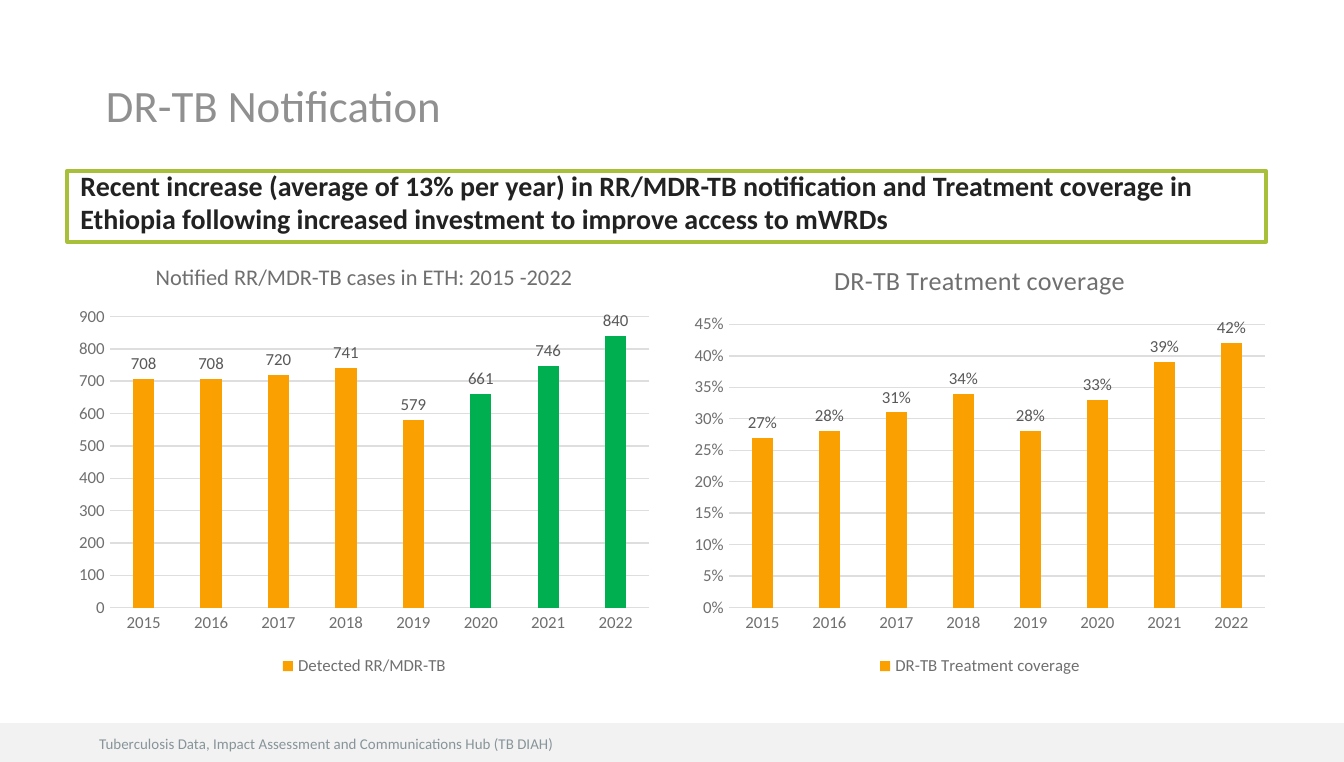
from dataclasses import dataclass

from pptx import Presentation
from pptx.chart.data import CategoryChartData
from pptx.dml.color import RGBColor
from pptx.enum.chart import XL_CHART_TYPE, XL_LABEL_POSITION, XL_LEGEND_POSITION, XL_TICK_MARK
from pptx.enum.shapes import MSO_SHAPE
from pptx.enum.text import MSO_ANCHOR, PP_ALIGN
from pptx.util import Inches, Pt

COLUMNS = XL_CHART_TYPE.COLUMN_CLUSTERED
OUTSIDE_END = XL_LABEL_POSITION.OUTSIDE_END
LEGEND_BOTTOM = XL_LEGEND_POSITION.BOTTOM
NO_TICK = XL_TICK_MARK.NONE
RECTANGLE = MSO_SHAPE.RECTANGLE
TOP, MIDDLE, BOTTOM = MSO_ANCHOR.TOP, MSO_ANCHOR.MIDDLE, MSO_ANCHOR.BOTTOM
LEFT = PP_ALIGN.LEFT


@dataclass(frozen=True)
class Theme:
    font: str = "Calibri"
    white: str = "FFFFFF"
    band: str = "F2F2F2"
    footer: str = "879499"
    title: str = "909090"
    text: str = "222222"
    frame: str = "A7BF39"
    axis_text: str = "6F6F6F"
    label_text: str = "595959"
    grid: str = "DEDEDE"
    bar: str = "FAA000"
    highlight: str = "00B050"
    footer_size: int = 8
    title_size: int = 24
    message_size: int = 15
    chart_size: int = 10
    axis_size: int = 9


THEME = Theme()
YEARS = [str(year) for year in range(2015, 2023)]


def color(value):
    return RGBColor.from_string(value)


def style_font(font, size, value, bold=False):
    font.name = THEME.font
    font.size = Pt(size)
    font.bold = bold
    font.color.rgb = color(value)


def write_text(shape, text, size, value, anchor, bold=False):
    frame = shape.text_frame
    frame.word_wrap = True
    frame.vertical_anchor = anchor
    paragraph = frame.paragraphs[0]
    paragraph.alignment = LEFT
    run = paragraph.add_run()
    run.text = text
    style_font(run.font, size, value, bold)


def add_rectangle(slide, box, fill):
    shape = slide.shapes.add_shape(RECTANGLE, *box)
    shape.shadow.inherit = False
    shape.fill.solid()
    shape.fill.fore_color.rgb = color(fill)
    shape.line.fill.background()
    return shape


def add_footer(slide, left, top, width, height):
    add_rectangle(slide, (left, top, width, height), THEME.band)
    credit = slide.shapes.add_textbox(
        left + Inches(0.64), top + Inches(0.04), Inches(5), Inches(0.24))
    write_text(credit, "Tuberculosis Data, Impact Assessment and Communications Hub (TB DIAH)",
               THEME.footer_size, THEME.footer, TOP)


def add_title(slide, *box):
    title = slide.shapes.add_textbox(*box)
    write_text(title, "DR-TB Notification", THEME.title_size, THEME.title, BOTTOM)


def add_message(slide, *box):
    message = add_rectangle(slide, box, THEME.white)
    message.line.color.rgb = color(THEME.frame)
    message.line.width = Pt(2)
    write_text(message, "Recent increase (average of 13% per year) in RR/MDR-TB notification and "
               "Treatment coverage in Ethiopia following increased investment to improve "
               "access to mWRDs", THEME.message_size, THEME.text, BOTTOM, bold=True)


def style_axes(chart, maximum, step, number_format):
    years, values = chart.category_axis, chart.value_axis
    for axis in (years, values):
        axis.major_tick_mark = axis.minor_tick_mark = NO_TICK
        style_font(axis.tick_labels.font, THEME.axis_size, THEME.axis_text)
    values.minimum_scale, values.maximum_scale, values.major_unit = 0, maximum, step
    values.tick_labels.number_format = number_format
    values.tick_labels.number_format_is_linked = False
    values.format.line.fill.background()
    values.has_major_gridlines = True
    for line in (years.format.line, values.major_gridlines.format.line):
        line.color.rgb = color(THEME.grid)
        line.width = Pt(0.75)


def add_column_chart(slide, box, title, title_size, name, values, maximum, step,
                     number_format="General", overlap=0, highlighted=()):
    data = CategoryChartData(number_format=number_format)
    data.categories = YEARS
    data.add_series(name, values)
    chart = slide.shapes.add_chart(COLUMNS, *box, data).chart
    style_font(chart.font, THEME.chart_size, THEME.text)

    chart.has_title = True
    run = chart.chart_title.text_frame.paragraphs[0].add_run()
    run.text = title
    style_font(run.font, title_size, THEME.axis_text)
    chart.chart_title.include_in_layout = False

    chart.has_legend = True
    chart.legend.position = LEGEND_BOTTOM
    chart.legend.include_in_layout = False
    style_font(chart.legend.font, THEME.axis_size, THEME.axis_text)
    style_axes(chart, maximum, step, number_format)

    plot = chart.plots[0]
    plot.vary_by_categories = False
    plot.gap_width = 219
    plot.overlap = overlap
    series = plot.series[0]
    series.invert_if_negative = False
    series.format.fill.solid()
    series.format.fill.fore_color.rgb = color(THEME.bar)
    for year in highlighted:
        fill = series.points[YEARS.index(year)].format.fill
        fill.solid()
        fill.fore_color.rgb = color(THEME.highlight)
    labels = series.data_labels
    labels.show_value = True
    labels.position = OUTSIDE_END
    labels.number_format = number_format
    labels.number_format_is_linked = False
    style_font(labels.font, THEME.axis_size, THEME.label_text)


def add_charts(slide, left, top, width, height):
    """Place the two charts side by side in equal halves."""
    gap = Inches(0.16)
    chart_width = (width - gap) // 2
    add_column_chart(
        slide, (left + chart_width + gap, top, chart_width, height),
        "DR-TB Treatment coverage", 14, "DR-TB Treatment coverage",
        (0.27, 0.28, 0.31, 0.34, 0.28, 0.33, 0.39, 0.42), 0.45, 0.05, number_format="0%")
    add_column_chart(
        slide, (left, top, chart_width, height),
        "Notified RR/MDR-TB cases in ETH: 2015 -2022", 12, "Detected RR/MDR-TB",
        (708, 708, 720, 741, 579, 661, 746, 840), 900, 100, overlap=-27,
        highlighted=("2020", "2021", "2022"))


def main():
    presentation = Presentation()
    presentation.slide_width = Inches(10)
    presentation.slide_height = Inches(5.67)
    slide = presentation.slides.add_slide(presentation.slide_layouts[6])
    add_footer(slide, Inches(0), Inches(5.38), Inches(10), Inches(0.29))
    add_title(slide, Inches(0.69), Inches(0.51), Inches(8.62), Inches(0.52))
    add_message(slide, Inches(0.5), Inches(1.27), Inches(8.92), Inches(0.53))
    add_charts(slide, Inches(0.5), Inches(1.8), Inches(9), Inches(3.27))
    presentation.save("out.pptx")


if __name__ == "__main__":
    main()
